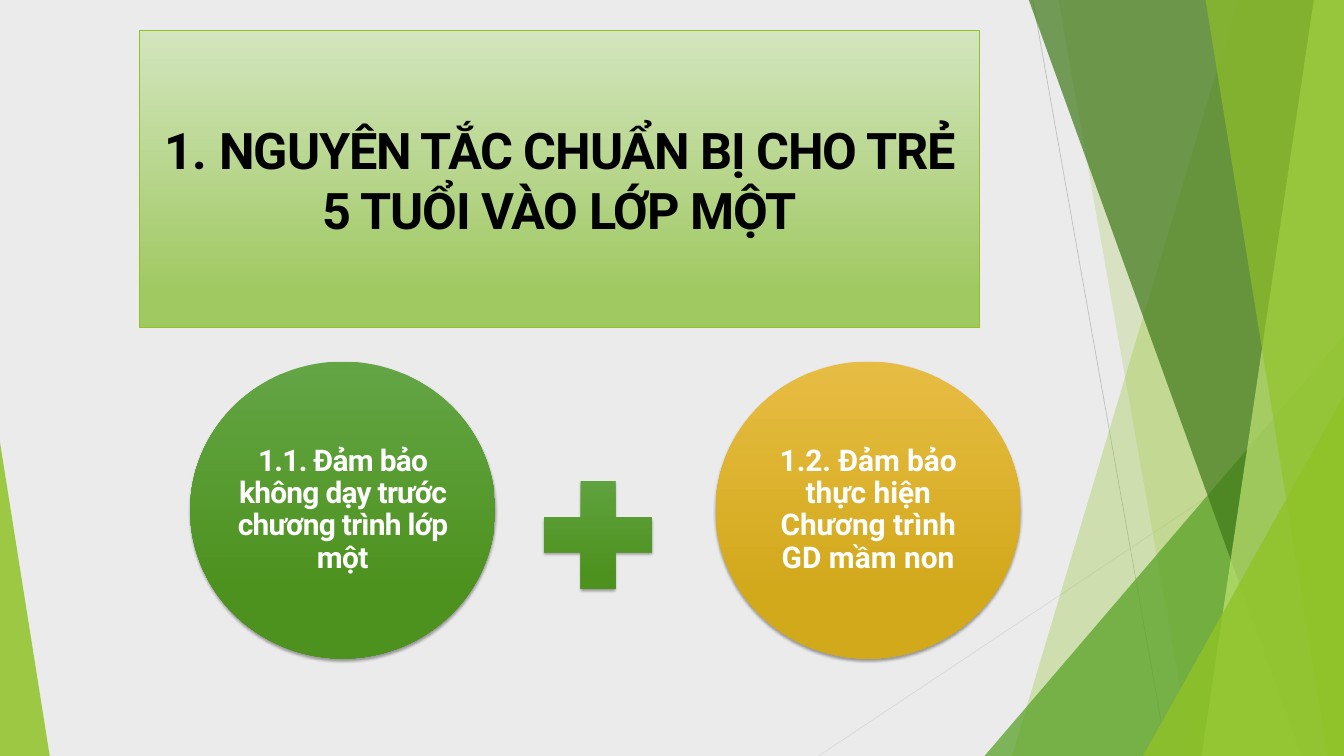
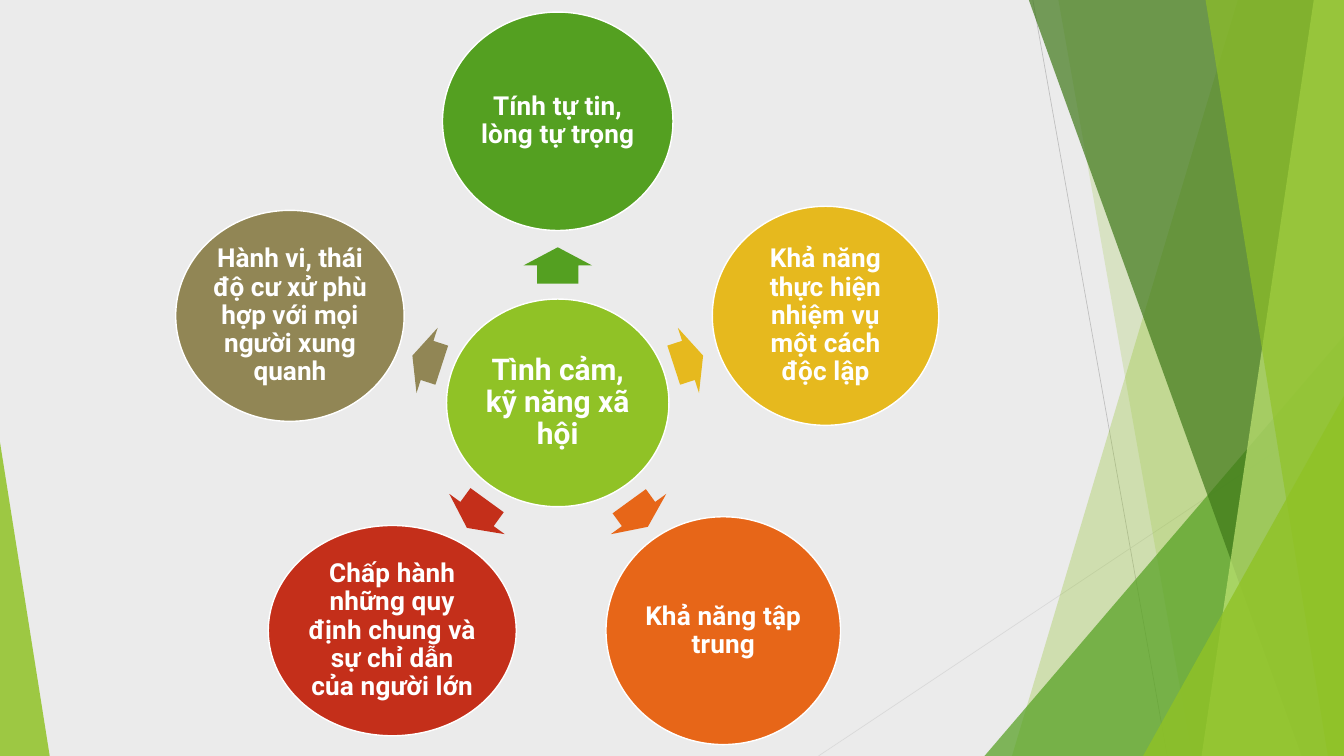
from math import cos, radians, sin

from lxml.etree import SubElement
from pptx import Presentation
from pptx.dml.color import RGBColor
from pptx.enum.shapes import MSO_CONNECTOR as Link, MSO_SHAPE as Kind
from pptx.enum.text import MSO_ANCHOR as Anchor, MSO_AUTO_SIZE as Fit, PP_ALIGN as Align
from pptx.oxml.ns import qn
from pptx.util import Inches, Pt

THEME = {
    "font": "Roboto", "page": "EBEBEB", "ink": "000000", "white": "FFFFFF",
    "lime": "90C226", "green": "54A021", "forest": "3F7819", "pale": "C0E474",
    "gold": "E6B91E", "orange": "E76618", "red": "C42F1A", "olive": "918655",
    "ray": "BFBFBF", "soft ray": "D9D9D9",
    "lime fade": [("D3E5BE", 0), ("A0C962", 0.88)],
    "green fade": [("63A545", 0), ("4D921E", 0.78)],
    "gold fade": [("E7BC43", 0), ("D2A91B", 0.78)],
    "title": 54, "large": 32, "small": 28,
}
# The grid has 80 columns and 45 rows of square cells
COLS, ROWS = 80, 45
CELL = Inches(0.25)


def place(page, kind, box, paint, alpha=100):
    """Add a preset shape, or a facet running to the right edge when kind is None."""
    if kind is None:
        top, bottom = box
        builder = page.shapes.build_freeform(top * 100, 0, scale=CELL / 100)
        corners = [(COLS, 0), (COLS, ROWS), (bottom, ROWS)]
        builder.add_line_segments([(x * 100, y * 100) for x, y in corners], close=True)
        shape = builder.convert_to_shape()
    else:
        shape = page.shapes.add_shape(kind, *[round(value * CELL) for value in box])
    shape.fill.solid()
    shape.fill.fore_color.rgb = RGBColor.from_string(THEME[paint])
    if alpha < 100:
        color = shape.element.spPr.find(".//" + qn("a:srgbClr"))
        SubElement(color, qn("a:alpha")).set("val", str(alpha * 1000))
    shape.line.fill.background()
    shape.shadow.inherit = False
    return shape


def write(shape, spans, size, ink="white", line_spacing=0.9, inset=0.04):
    """Fill a shape with one centred bold paragraph of (text, letter spacing) spans."""
    frame = shape.text_frame
    margins = {"margin_" + side: Inches(inset) for side in ("left", "right", "top", "bottom")}
    frame_format = {"word_wrap": True, "auto_size": Fit.NONE,
                    "vertical_anchor": Anchor.MIDDLE, **margins}
    for name, value in frame_format.items():
        setattr(frame, name, value)
    para = frame.paragraphs[0]
    para.alignment, para.line_spacing = Align.CENTER, line_spacing
    for text, _ in spans:
        span = para.add_run()
        span.text = text
        font_format = {"name": THEME["font"], "size": Pt(THEME[size]), "bold": True}
        for name, value in font_format.items():
            setattr(span.font, name, value)
        span.font.color.rgb = RGBColor.from_string(THEME[ink])
    for props, (_, spacing) in zip(shape.element.iter(qn("a:rPr")), spans):
        props.set("spc", str(round(spacing * 100)))


deck = Presentation()
deck.slide_width, deck.slide_height = COLS * CELL, ROWS * CELL
master = deck.slide_master
master.background.fill.solid()
master.background.fill.fore_color.rgb = RGBColor.from_string(THEME["page"])

# Shared backdrop: thin rays and translucent facets, moved to the master
page = deck.slides.add_slide(deck.slide_layouts[5])
title = page.shapes.title
backdrop = []
for start, end, paint in [((61.48, 0), (69.48, ROWS), "ray"),
                          ((COLS, 24.16), (48.72, ROWS), "soft ray")]:
    ray = page.shapes.add_connector(Link.STRAIGHT, *[round(v * CELL) for v in start + end])
    ray.line.color.rgb = RGBColor.from_string(THEME[paint])
    ray.line.width = Pt(0.75)
    SubElement(ray.element.spPr, qn("a:effectLst"))
    backdrop.append(ray)

# Facets give (top x, bottom x); triangles give (left, top, width, apex)
for spot, paint, alpha in [
    ((73.68, 60.24), "lime", 30),
    ((63, 70.96), "lime", 20),
    ((58.6, 20, 21.4, 1), "green", 72),
    ((61.24, 77.48), "forest", 70),
    ((78.2, 71.52), "pale", 70),
    ((71.76, 79.04), "lime", 65),
    ((68.04, 23.56, 11.96, 1), "lime", 80),
    ((0, 26.32, 2.96, 0), "lime", 85),
]:
    if len(spot) == 2:
        piece = place(page, None, spot, paint, alpha)
    else:
        left, top, width, apex = spot
        box = (left, top, width, ROWS - top)
        piece = place(page, Kind.ISOSCELES_TRIANGLE, box, paint, alpha)
        piece.adjustments[0] = apex
    backdrop.append(piece)

for number, piece in enumerate(backdrop, start=101):
    piece.element.find(".//" + qn("p:cNvPr")).set("id", str(number))
    master.shapes.element.append(piece.element)

# Slide 1: rounded title panel
title_box = {"left": 8.32, "top": 1.84, "width": 50, "height": 17.68}
for name, value in title_box.items():
    setattr(title, name, round(value * CELL))
outline = SubElement(title.element.spPr, qn("a:prstGeom"))
outline.set("prst", "roundRect")
SubElement(outline, qn("a:avLst"))
title.line.color.rgb = RGBColor.from_string(THEME["lime"])
title.line.width = Pt(1)
write(title, [("1. ", -0.7), ("NGUYÊN TẮC CHUẨN BỊ CHO TRẺ 5 TUỔI VÀO LỚP MỘT", -1.2)],
      "title", "ink", 1.0, 0.1)

# Slide 1: two principles joined by a plus
principles = [
    ("green", [("1.1. Đảm bảo không dạy trước chương trình lớp một", -0.8)]),
    ("gold", [("1.2. Đảm bảo ", -0.1), ("thực ", 0), ("hiện Chương ", -0.1),
              ("trình GD mầm non", 0)]),
]
raised = []
for column, (paint, spans) in enumerate(principles):
    disc = place(page, Kind.OVAL, (11.32 + column * 31.28, 21.52, 18.16, 17.68), paint)
    write(disc, spans, "large")
    raised.append((disc, paint + " fade"))
plus = place(page, Kind.MATH_PLUS, (31.24, 27.48, 8.72, 8.72), "green")
raised.append((plus, "green fade"))

# Slide 1: vertical fades and soft shadows
for shape, fade in [(title, "lime fade")] + raised:
    shape.fill.gradient()
    shape.fill.gradient_angle = 270
    for stop, (color, position) in zip(shape.fill.gradient_stops, THEME[fade]):
        stop.color.rgb = RGBColor.from_string(color)
        stop.position = position
for shape, _ in raised:
    effects = shape.element.spPr.find(qn("a:effectLst"))
    shadow = SubElement(effects, qn("a:outerShdw"), blurRad=str(Pt(3)), dist=str(Pt(2)),
                        dir="5400000", rotWithShape="0")
    shade = SubElement(shadow, qn("a:srgbClr"), val=THEME["ink"])
    SubElement(shade, qn("a:alpha"), val="35000")

# Slide 2: a hub with five petals, each pointed at by an arrow
page = deck.slides.add_slide(deck.slide_layouts[6])
hub_x, hub_y = 33.2, 23.98
petal_reach, arrow_reach = 16.76, 8.18
petals = [
    ("Tính tự tin, lòng tự trọng", "green", 13.72, 13, 2.16, 0.2),
    ("Khả năng thực hiện nhiệm vụ một cách độc lập", "gold", 13.48, 13.04, 1.84, 0.2),
    ("Khả năng tập trung", "orange", 13.96, 13.56, 1.88, 0.2),
    ("Chấp hành những quy định chung và sự chỉ dẫn của người lớn", "red",
     14.76, 12.52, 2.04, 0.2),
    ("Hành vi, thái độ cư xử phù hợp với mọi người xung quanh", "olive",
     13.6, 12.56, 1.84, 0),
]
hub = place(page, Kind.OVAL, (hub_x - 6.62, hub_y - 6.18, 13.24, 12.36), "lime")
write(hub, [("Tình cảm, kỹ năng xã hội", 0)], "large")
discs = [hub]
for index, (text, paint, width, height, length, spacing) in enumerate(petals):
    angle = index * 360 / len(petals) - 90
    across, down = cos(radians(angle)), sin(radians(angle))
    arrow_box = (hub_x + arrow_reach * across - length / 2,
                 hub_y + arrow_reach * down - 2.04, length, 4.08)
    arrow = place(page, Kind.RIGHT_ARROW, arrow_box, paint)
    arrow.adjustments[0], arrow.adjustments[1] = 0.6, 0.5
    arrow.rotation = angle % 360
    petal_box = (hub_x + petal_reach * across - width / 2,
                 hub_y + petal_reach * down - height / 2, width, height)
    petal = place(page, Kind.OVAL, petal_box, paint)
    write(petal, [(text, spacing)], "small")
    discs.append(petal)
for disc in discs:
    disc.line.color.rgb = RGBColor.from_string(THEME["white"])
    disc.line.width = Pt(1.5)

deck.save("out.pptx")
